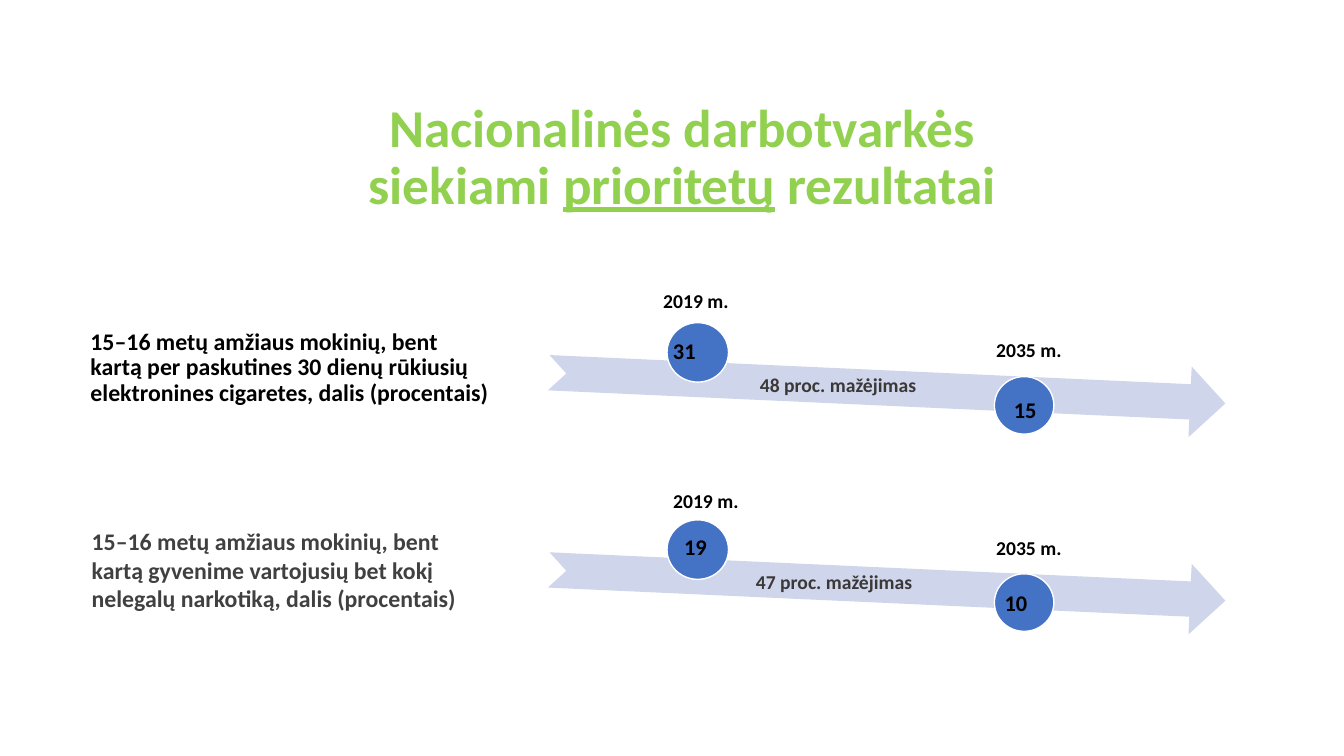
from pptx import Presentation
from pptx.dml.color import RGBColor as RGB
from pptx.enum.shapes import MSO_SHAPE as Kind
from pptx.enum.text import MSO_ANCHOR as Anchor, PP_ALIGN as Align
from pptx.util import Cm, Pt

HUES = {
    "title": "92D050",
    "black": "000000",
    "gray": "404040",
    "change": "3B3838",
    "arrow": "CFD5EA",
    "dot": "4472C4",
    "white": "FFFFFF",
}
STEP = 4.97  # distance between the two rows, in cm

# Positions are in cm; "y" values count from the top of the row.
ROWS = [
    {
        "goal": "15–16 metų amžiaus mokinių, bent kartą per paskutines 30 dienų "
                "rūkiusių elektronines cigaretes, dalis (procentais)",
        "x": 2.03, "hue": "black", "lead": 0.9,
        "year": (16.08, 7.29),
        "start": ("31", 16.71, 8.36), "end": ("15", 25.3, 9.86),
        "change": ("48 proc. mažėjimas", 18.9),
    },
    {
        "goal": "15–16 metų amžiaus mokinių, bent kartą gyvenime vartojusių "
                "bet kokį nelegalų narkotiką, dalis (procentais)",
        "x": 2.06, "hue": "gray", "lead": 1.0,
        "year": (16.33, 7.35),
        "start": ("19", 16.99, 8.34), "end": ("10", 25.07, 9.76),
        "change": ("47 proc. mažėjimas", 18.8),
    },
]


def write(shapes, text, x, y, w, h, size=16, hue="black", align=Align.LEFT,
          anchor=Anchor.TOP, lead=1.0, pad=None, under=None):
    """Add a bold text box; text is a string or a list of runs and "\\n" breaks."""
    box = shapes.add_textbox(Cm(x), Cm(y), Cm(w), Cm(h))
    frame = box.text_frame
    frame.word_wrap = True
    frame.vertical_anchor = anchor
    if pad is not None:
        frame.margin_left = frame.margin_right = Cm(pad)
        frame.margin_top = frame.margin_bottom = Cm(pad)
    para = frame.paragraphs[0]
    para.alignment = align
    para.line_spacing = lead
    for part in [text] if isinstance(text, str) else text:
        if part == "\n":
            para.add_line_break()
            continue
        run = para.add_run()
        run.text = part
        font = run.font
        font.name, font.size, font.bold = "Calibri", Pt(size), True
        font.color.rgb = RGB.from_string(HUES[hue])
        if part == under:
            font.underline = True


def draw(shapes, kind, x, y, w, h, hue, edge=None):
    shape = shapes.add_shape(kind, Cm(x), Cm(y), Cm(w), Cm(h))
    shape.shadow.inherit = False
    shape.fill.solid()
    shape.fill.fore_color.rgb = RGB.from_string(HUES[hue])
    if edge:
        shape.line.color.rgb = RGB.from_string(HUES[edge])
        shape.line.width = Pt(1)
    else:
        shape.line.fill.background()
    return shape


def label(shapes, text, x, y, w, h, anchor):
    write(shapes, text, x, y, w, h, size=14, align=Align.CENTER,
          anchor=anchor, lead=0.9, pad=0.28)


def trend(shapes, row, top):
    """Group the arrow with its two years and dots."""
    group = shapes.add_group_shape().shapes
    arrow = draw(group, Kind.NOTCHED_RIGHT_ARROW, 13.82, top + 8.89,
                 17.07, 1.78, "arrow")
    arrow.rotation = 2.6
    x, y = row["year"]
    label(group, "2019 m.", x, top + y, 2.92, 0.86, Anchor.BOTTOM)
    draw(group, Kind.OVAL, 16.81, top + 8.13, 1.55, 1.5, "dot", "white")
    label(group, "2035 m.", 24.33, top + 8.33, 3.2, 0.53, Anchor.TOP)
    draw(group, Kind.OVAL, 25.06, top + 9.49, 1.5, 1.45, "dot", "white")


def result(shapes, row, top):
    write(shapes, row["goal"], row["x"], top + 8.18, 10.57, 2.92,
          size=17, hue=row["hue"], lead=row["lead"])
    trend(shapes, row, top)
    for text, x, y in (row["start"], row["end"]):
        write(shapes, text, x, top + y, 1.9, 0.94)
    text, x = row["change"]
    write(shapes, text, x, top + 9.27, 5.77, 0.86, size=14, hue="change")


def main():
    deck = Presentation()
    deck.slide_width, deck.slide_height = Cm(33.87), Cm(19.05)
    shapes = deck.slides.add_slide(deck.slide_layouts[6]).shapes
    title = ["Nacionalinės darbotvarkės ", "\n", "siekiami ", "prioritetų",
             " rezultatai "]
    write(shapes, title, 2.74, 2.16, 29.21, 3.68, size=38, hue="title",
          align=Align.CENTER, anchor=Anchor.MIDDLE, lead=0.9,
          under="prioritetų")
    for i, row in enumerate(ROWS):
        result(shapes, row, i * STEP)
    deck.save("out.pptx")


if __name__ == "__main__":
    main()
